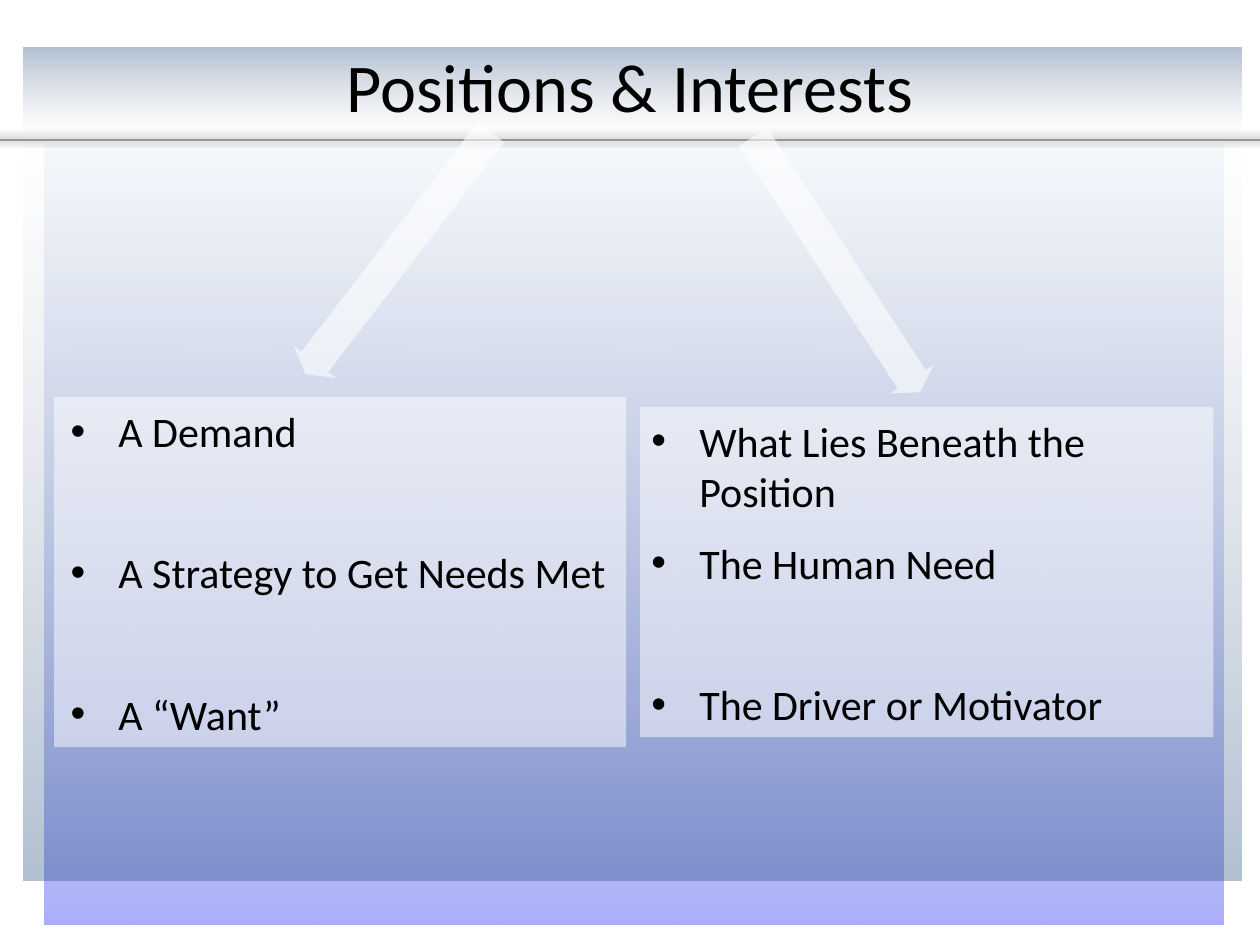
from dataclasses import dataclass

from lxml.etree import SubElement
from pptx import Presentation
from pptx.dml.color import RGBColor
from pptx.enum.shapes import MSO_CONNECTOR, MSO_SHAPE
from pptx.enum.text import MSO_ANCHOR, MSO_AUTO_SIZE, PP_ALIGN
from pptx.oxml.ns import qn
from pptx.util import Inches, Pt

COLORS = {
    "black": "000000",
    "white": "FFFFFF",
    "rule": "969696",
    "vivid": "2932EF",
    "sky": "4F81BD",
    "navy": "1F497D",
    "slate": "7B869F",
}
FONT = "Calibri"
Frame = tuple[float, float, float, float]


@dataclass
class Panel:
    frame: Frame
    colors: tuple[str, str]
    opacities: tuple[int, int]
    angle: int


@dataclass
class BulletList:
    frame: Frame
    indent: float
    items: list[str]
    gaps: list[int]


@dataclass
class Arrow:
    left: float
    top: float
    rotation: float


PANELS = [
    Panel((0.35, 1.14, 9.36, 6.2), ("vivid", "sky"), (39, 5), 90),
    Panel((0.19, 1.11, 9.66, 5.88), ("navy", "slate"), (35, 0), 90),
    Panel((0.19, 0.38, 9.66, 0.67), ("navy", "slate"), (35, 0), 270),
]
INTERESTS = BulletList(
    (5.08, 3.23, 4.55, 2.62), 0.38,
    ["What Lies Beneath the Position", "The Human Need", "The Driver or Motivator"],
    [12, 52, 0],
)
POSITIONS = BulletList(
    (0.43, 3.15, 4.54, 2.78), 0.42,
    ["A Demand", "A Strategy to Get Needs Met", "A “Want”"],
    [52, 52, 0],
)
ARROWS = [Arrow(1.95, 1.8, 127.5), Arrow(5.43, 1.89, 56.8)]


def rgb(name: str) -> RGBColor:
    return RGBColor.from_string(COLORS[name])


def set_opacity(shape, *opacities: int) -> None:
    colors = list(shape._element.spPr.iter(qn("a:srgbClr")))
    for color, opacity in zip(colors, opacities):
        SubElement(color, qn("a:alpha"), val=str(opacity * 1000))


def fill_white(shape, opacity: int) -> None:
    shape.fill.solid()
    shape.fill.fore_color.rgb = rgb("white")
    set_opacity(shape, opacity)


def place(shape, frame: Frame) -> None:
    shape.left, shape.top, shape.width, shape.height = map(Inches, frame)


def style(paragraph, size: int) -> None:
    for span in paragraph.runs:
        span.font.name = FONT
        span.font.size = Pt(size)
        span.font.color.rgb = rgb("black")


def add_plain_shape(page, kind: MSO_SHAPE, frame: Frame):
    shape = page.shapes.add_shape(kind, *map(Inches, frame))
    shape.shadow.inherit = False
    shape.line.fill.background()
    return shape


def draw_panel(page, panel: Panel) -> None:
    shape = add_plain_shape(page, MSO_SHAPE.ROUNDED_RECTANGLE, panel.frame)
    shape.adjustments[0] = 0
    shape.fill.gradient()
    shape.fill.gradient_angle = panel.angle
    for stop, position, color in zip(shape.fill.gradient_stops, (0, 1), panel.colors):
        stop.position = position
        stop.color.rgb = rgb(color)
    set_opacity(shape, *panel.opacities)


def draw_rule(page) -> None:
    rule = page.shapes.add_connector(
        MSO_CONNECTOR.STRAIGHT, Inches(10.23), Inches(1.11), Inches(-0.19), Inches(1.11)
    )
    rule.line.color.rgb = rgb("rule")
    rule.line.width = Pt(1)
    effects = SubElement(rule._element.spPr, qn("a:effectLst"))
    shadow = SubElement(
        effects, qn("a:outerShdw"), blurRad=str(Pt(5)), dist=str(Pt(1)),
        dir="16200000", algn="b", rotWithShape="0",
    )
    color = SubElement(shadow, qn("a:srgbClr"), val=COLORS["black"])
    SubElement(color, qn("a:alpha"), val="55000")


def fill_title(box) -> None:
    place(box, (0.5, 0.3, 9, 1.25))
    frame = box.text_frame
    frame.text = "Positions & Interests"
    frame.auto_size = MSO_AUTO_SIZE.NONE
    frame.vertical_anchor = MSO_ANCHOR.TOP
    frame.paragraphs[0].alignment = PP_ALIGN.CENTER
    style(frame.paragraphs[0], 39)


def fill_list(box, content: BulletList) -> None:
    place(box, content.frame)
    fill_white(box, 50)
    frame = box.text_frame
    frame.text = "\n".join(content.items)
    frame.auto_size = MSO_AUTO_SIZE.NONE
    frame.vertical_anchor = MSO_ANCHOR.MIDDLE
    frame.margin_left = frame.margin_right = Inches(0.09)
    frame.margin_top = frame.margin_bottom = Inches(0.04)
    for paragraph, gap in zip(frame.paragraphs, content.gaps):
        paragraph.space_before = Pt(0)
        paragraph.space_after = Pt(gap)
        properties = paragraph._p.get_or_add_pPr()
        properties.set("marL", str(Inches(content.indent)))
        properties.set("indent", str(Inches(-0.38)))
        style(paragraph, 24)


def draw_arrow(page, arrow: Arrow) -> None:
    shape = add_plain_shape(
        page, MSO_SHAPE.RIGHT_ARROW, (arrow.left, arrow.top, 2.42, 0.42)
    )
    shape.adjustments[0] = 0.635
    shape.adjustments[1] = 0.294
    shape.rotation = arrow.rotation
    fill_white(shape, 58)


def main() -> None:
    deck = Presentation()
    deck.slide_width, deck.slide_height = Inches(10), Inches(7.5)
    page = deck.slides.add_slide(deck.slide_layouts[3])
    title, left_body, right_body = list(page.placeholders)[:3]

    for panel in PANELS:
        draw_panel(page, panel)
    draw_rule(page)

    fill_title(title)
    fill_list(right_body, INTERESTS)
    fill_list(left_body, POSITIONS)
    for box in (title, right_body, left_body):
        page.shapes._spTree.append(box._element)

    for arrow in ARROWS:
        draw_arrow(page, arrow)
    deck.save("out.pptx")


if __name__ == "__main__":
    main()
